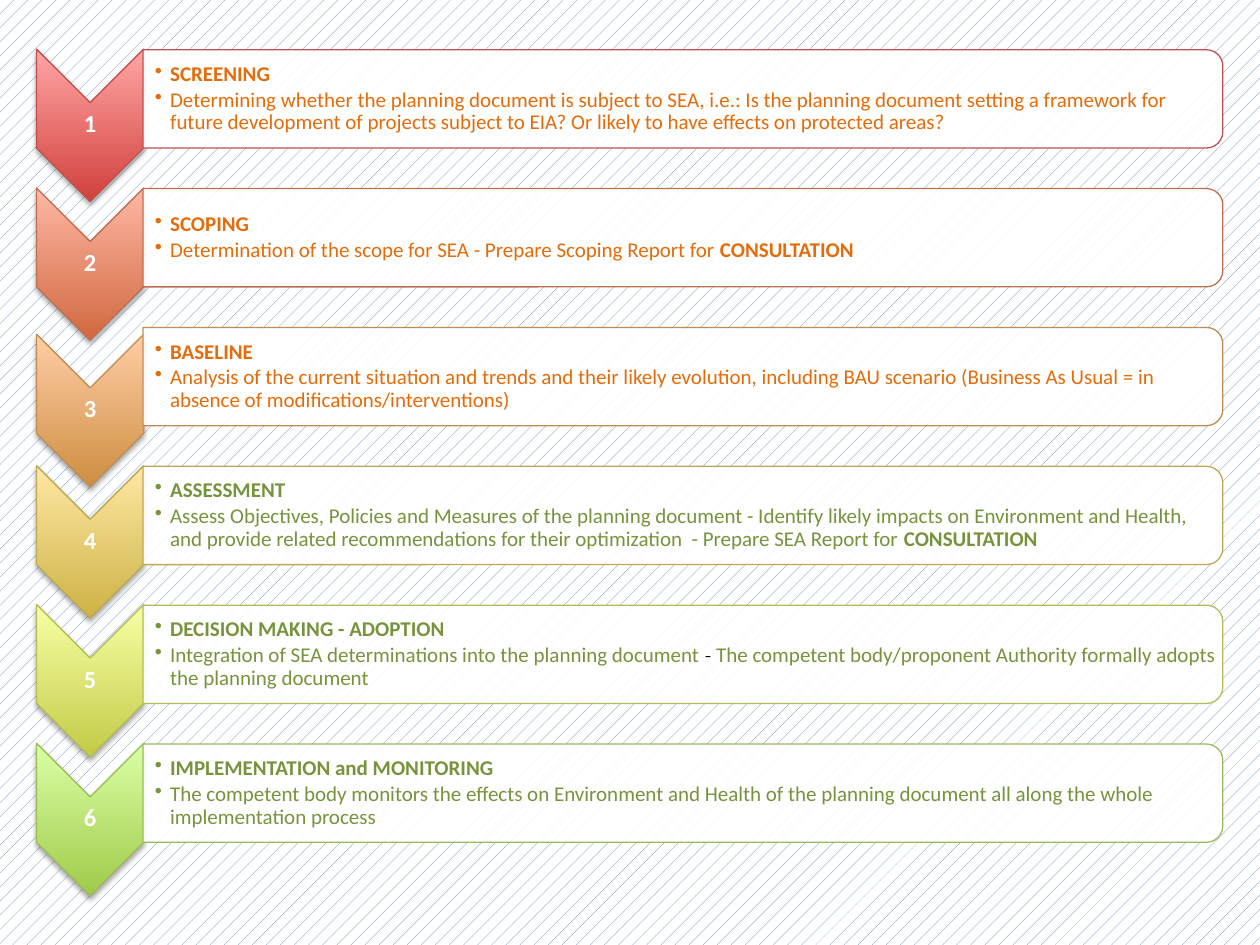
from dataclasses import dataclass

from lxml import etree
from pptx import Presentation
from pptx.dml.color import RGBColor
from pptx.enum.dml import MSO_PATTERN
from pptx.enum.shapes import MSO_SHAPE
from pptx.enum.text import MSO_ANCHOR, PP_ALIGN
from pptx.oxml import parse_xml
from pptx.oxml.ns import nsdecls, qn
from pptx.util import Inches, Pt

CHEVRON = MSO_SHAPE.CHEVRON
ROUNDED_PANEL = MSO_SHAPE.ROUND_2_SAME_RECTANGLE
DOTTED = MSO_PATTERN.PERCENT_10
MIDDLE = MSO_ANCHOR.MIDDLE
CENTER = PP_ALIGN.CENTER
LEFT = PP_ALIGN.LEFT

COLORS = {
    "white": "FFFFFF",
    "black": "000000",
    "background": "4F81BD",
    "orange": "E46C0A",
    "green": "77933C",
}

ROW_PITCH = 5.51 / 5
CHEVRON_TOP, NUMBER_TOP, PANEL_TOP, TEXT_TOP = 0.57, 0.81, -3.5, 0.43


@dataclass(frozen=True)
class Span:
    text: str
    color: str
    bold: bool = False
    size: float = 12
    font: str = "Calibri"


@dataclass(frozen=True)
class Step:
    heading: str
    details: list[Span]
    color: str
    dark: str
    light: str
    line: str
    chevron_shift: float = 0


STEPS = [
    Step("SCREENING", [
        Span("Determining whether the planning document is subject to SEA, i.e.: "
             "Is the planning document setting a framework for future development of "
             "projects subject to EIA? Or likely to have effects on protected areas?",
             "orange"),
    ], "orange", "D1403C", "FFA6A5", "C0504D"),
    Step("SCOPING", [
        Span("Determination of the scope for SEA - Prepare Scoping Report for ", "orange"),
        Span("CONSULTATION", "orange", bold=True),
    ], "orange", "D0683F", "FFB7A5", "BF6F4F"),
    Step("BASELINE", [
        Span("Analysis of the current situation and trends and their likely evolution, "
             "including BAU scenario (Business As Usual = in absence of "
             "modifications/interventions)", "orange"),
    ], "orange", "CE8E42", "FFCDA5", "BE8D52", chevron_shift=0.06),
    Step("ASSESSMENT", [
        Span("Assess Objectives, Policies and Measures of the planning document - "
             "Identify likely impacts on Environment and Health, and provide related "
             "recommendations for their optimization  - Prepare SEA Report for ", "green"),
        Span("CONSULTATION", "green", bold=True),
    ], "green", "CDB245", "FFE8A5", "BDA954"),
    Step("DECISION MAKING - ADOPTION", [
        Span("Integration of SEA determinations into the planning document ", "green"),
        Span("- ", "black", font="Cambria"),
        Span("The competent body/proponent Authority formally adopts the planning "
             "document", "green"),
    ], "green", "C2CB47", "F7FFA5", "B5BC57"),
    Step("IMPLEMENTATION and MONITORING", [
        Span("The competent body monitors the effects on Environment and Health of the "
             "planning document all along the whole implementation process", "green"),
    ], "green", "A0CA4A", "DAFFA5", "9BBB59"),
]


def add_turned_shape(slide, kind, box: tuple, line: str):
    """Add a preset shape turned a quarter clockwise, with a thin outline."""
    shape = slide.shapes.add_shape(kind, *map(Inches, box))
    shape.rotation = 90
    shape.shadow.inherit = False
    shape.line.color.rgb = RGBColor.from_string(line)
    shape.line.width = Pt(0.75)
    return shape


def add_chevron(slide, step: Step, top: float) -> None:
    shape = add_turned_shape(slide, CHEVRON, (0.11, top, 1.21, 0.85), step.line)
    fill = shape.fill
    fill.gradient()
    fill.gradient_angle = 90
    for stop, color, position in zip(fill.gradient_stops, (step.dark, step.light), (0, 1)):
        stop.color.rgb = RGBColor.from_string(color)
        stop.position = position
    properties = shape.element.spPr
    # The gradient stays upright while the shape is turned
    properties.find(qn("a:gradFill")).set("rotWithShape", "0")
    properties.find(qn("a:effectLst")).append(parse_xml(
        f'<a:outerShdw {nsdecls("a")} blurRad="{Pt(3.1)}" dist="{Pt(1.8)}" '
        'dir="5400000" rotWithShape="0">'
        f'<a:srgbClr val="{COLORS["black"]}"><a:alpha val="35000"/></a:srgbClr>'
        '</a:outerShdw>'))


def add_panel(slide, step: Step, top: float) -> None:
    shape = add_turned_shape(slide, ROUNDED_PANEL, (5.03, top, 0.78, 8.57), step.line)
    shape.fill.solid()
    shape.fill.fore_color.rgb = RGBColor.from_string(COLORS["white"])
    color = shape.element.spPr.find(qn("a:solidFill"))[0]
    etree.SubElement(color, qn("a:alpha")).set("val", "90000")


def add_text(slide, box: tuple, paragraphs: list[list[Span]], left_inset: float,
             space_after: int, bulleted: bool) -> None:
    """Add a text box; space_after is a percentage of the line."""
    frame = slide.shapes.add_textbox(*map(Inches, box)).text_frame
    frame_format = {
        "word_wrap": True,
        "vertical_anchor": MIDDLE,
        "margin_left": Inches(left_inset),
        "margin_top": Inches(0.01),
        "margin_right": Inches(0.01),
        "margin_bottom": Inches(0.01),
    }
    for name, value in frame_format.items():
        setattr(frame, name, value)
    for index, spans in enumerate(paragraphs):
        paragraph = frame.add_paragraph() if index else frame.paragraphs[0]
        paragraph.alignment = LEFT if bulleted else CENTER
        paragraph.line_spacing = 0.9
        properties = paragraph._p.get_or_add_pPr()
        spacing = etree.SubElement(properties, qn("a:spcAft"))
        etree.SubElement(spacing, qn("a:spcPct")).set("val", str(space_after * 1000))
        if bulleted:
            paragraph.level = 1
            properties.set("marL", str(Inches(0.12)))
            properties.set("indent", str(Inches(-0.12)))
            etree.SubElement(properties, qn("a:buChar")).set("char", "•")
        for span in spans:
            run = paragraph.add_run()
            run.text = span.text
            run_format = {"name": span.font, "size": Pt(span.size), "bold": span.bold}
            for name, value in run_format.items():
                setattr(run.font, name, value)
            run.font.color.rgb = RGBColor.from_string(COLORS[span.color])


def add_step(slide, index: int, step: Step) -> None:
    offset = index * ROW_PITCH
    chevron_offset = offset + step.chevron_shift
    number = Span(str(index + 1), "white", bold=True, size=14)
    heading = Span(step.heading, step.color, bold=True)
    add_chevron(slide, step, CHEVRON_TOP + chevron_offset)
    add_text(slide, (0.29, NUMBER_TOP + chevron_offset, 0.85, 0.36), [[number]],
             left_inset=0.01, space_after=35, bulleted=False)
    add_panel(slide, step, PANEL_TOP + offset)
    add_text(slide, (1.14, TEXT_TOP + offset, 8.53, 0.71), [[heading], step.details],
             left_inset=0.09, space_after=15, bulleted=True)


def main() -> None:
    presentation = Presentation()
    presentation.slide_width = Inches(10)
    presentation.slide_height = Inches(7.5)
    slide = presentation.slides.add_slide(presentation.slide_layouts[6])

    # Patterned background
    background = slide.background.fill
    background.patterned()
    background.pattern = DOTTED
    background.fore_color.rgb = RGBColor.from_string(COLORS["background"])
    background.back_color.rgb = RGBColor.from_string(COLORS["white"])

    # One row for each step
    for index, step in enumerate(STEPS):
        add_step(slide, index, step)

    presentation.save("out.pptx")


if __name__ == "__main__":
    main()
